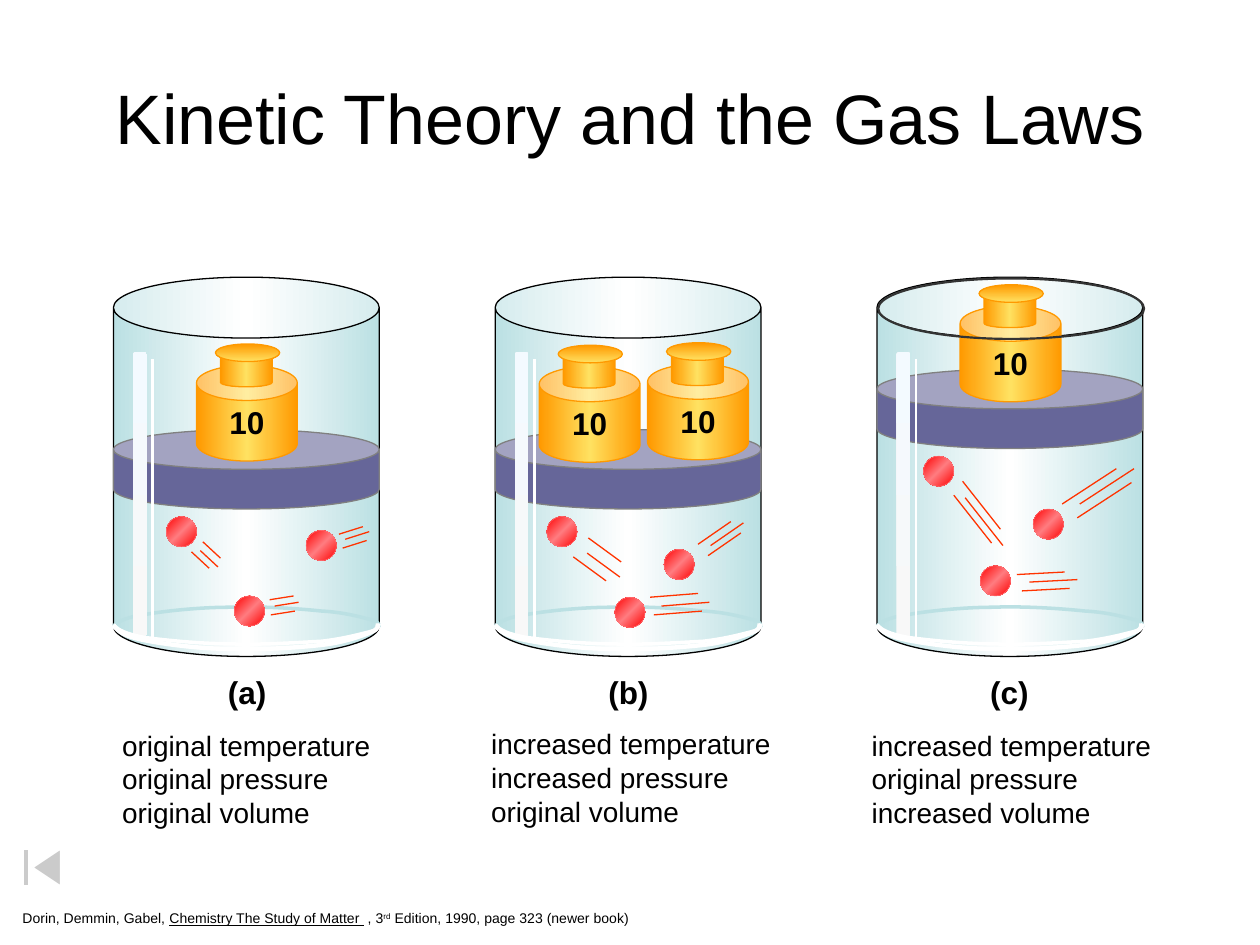
from lxml import etree
from pptx import Presentation
from pptx.dml.color import RGBColor
from pptx.enum.shapes import MSO_CONNECTOR, MSO_SHAPE
from pptx.enum.text import MSO_ANCHOR, MSO_AUTO_SIZE, PP_ALIGN
from pptx.oxml.ns import qn
from pptx.util import Emu, Pt

CAN, OVAL, BAR = MSO_SHAPE.CAN, MSO_SHAPE.OVAL, MSO_SHAPE.ROUNDED_RECTANGLE
BUTTON = MSO_SHAPE.ACTION_BUTTON_BEGINNING
STRAIGHT = MSO_CONNECTOR.STRAIGHT
MIDDLE, CENTER, LEFT = MSO_ANCHOR.MIDDLE, PP_ALIGN.CENTER, PP_ALIGN.LEFT
GROW, FIXED = MSO_AUTO_SIZE.SHAPE_TO_FIT_TEXT, MSO_AUTO_SIZE.NONE

PX = 9144  # EMU per px, 100 px to the inch
FONT = "Arial"
COLORS = {
    "black": "000000", "white": "FFFFFF", "glass": "BBE0E3", "piston": "666699",
    "piston_edge": "808080", "gleam": "F8F8F8", "gleam_end": "F3FAFF",
    "red": "FF0000", "pink": "FF7C80", "streak": "FF3300",
    "orange": "FF9900", "gold": "FFE161", "rim": "333333",
}
GLASS_FILL = (0, "glass", "white", "glass")  # angle, then evenly spaced colours
GLEAM_FILL = (0, "gleam", "gleam_end")
BALL_FILL = (45, "red", "pink", "red")
BRASS_FILL = (0, "orange", "gold", "orange")
CAP_FILL = (90, "orange", "gold")

# Bezier points of the base curves, x measured from the cylinder's left side
BACK_CURVE = [(0, 497), (3, 494), (9, 490), (24, 488), (40, 485), (69, 482), (92, 482),
              (116, 481), (146, 483), (165, 485), (184, 486), (197, 490), (205, 492),
              (213, 494), (210, 497), (211, 498)]
INNER_CURVE = [(0, 496), (4, 500), (9, 503), (25, 506), (40, 508), (69, 511), (92, 511),
               (116, 512), (146, 510), (165, 509), (183, 507), (197, 503), (205, 501),
               (212, 499), (210, 496), (211, 495)]
OUTER_CURVE = [(0, 496), (3, 501), (9, 505), (24, 508), (39, 511), (68, 515), (92, 515),
               (115, 516), (146, 514), (164, 512), (183, 510), (196, 505), (204, 502),
               (212, 499), (209, 496), (210, 495)]

# balls: top left corners; trails: shared vector, then the start of each streak
CYLINDERS = [
    dict(left=90, piston=341, label="(a)", label_left=171, caption_at=(87, 573, 218, 90),
         caption=["original temperature", "original pressure", "original volume"],
         balls=[(243, 421), (186, 473), (132, 410)], weights=[(156, 290)],
         trails=[((19, -6), (269, 424), (274, 428), (272, 435)),
                 ((19, -3), (214, 476), (218, 481), (215, 488)),
                 ((14, 13), (161, 430), (159, 437), (152, 438))]),
    dict(left=393, piston=341, label="(b)", label_left=473, caption_at=(380, 572, 243, 90),
         caption=["increased temperature", "increased pressure", "original volume"],
         balls=[(527, 436), (488, 474), (434, 410)], weights=[(428, 291), (514, 289)],
         trails=[((26, -18), (554, 432), (564, 433), (562, 441)),
                 ((38, -3), (516, 474), (525, 481), (519, 488)),
                 ((26, 19), (467, 427), (466, 439), (455, 442))]),
    dict(left=696, piston=293, label="(c)", label_left=776, caption_at=(682, 573, 243, 90),
         caption=["increased temperature", "original pressure", "increased volume"],
         balls=[(820, 404), (778, 449), (733, 362)], weights=[(762, 243)], rim=True,
         trails=[((43, -28), (843, 400), (857, 400), (855, 411)),
                 ((38, -2), (807, 456), (817, 462), (811, 469)),
                 ((30, 38), (764, 382), (766, 395), (757, 393))]),
]


def color(name):
    return RGBColor.from_string(COLORS[name])


def lengths(*values):
    return [Emu(value * PX) for value in values]


def paint(shape, fill=None, line=None, width=0.75):
    """Fill is a colour name, a gradient tuple or None."""
    shape.shadow.inherit = False
    if fill is None:
        shape.fill.background()
    elif isinstance(fill, str):
        shape.fill.solid()
        shape.fill.fore_color.rgb = color(fill)
    else:
        angle, *names = fill
        shape.fill.gradient()
        gradient = shape._element.spPr.find(qn("a:gradFill"))
        stops = gradient.find(qn("a:gsLst"))
        for stop in list(stops):
            stops.remove(stop)
        for index, name in enumerate(names):
            position = str(100000 * index // (len(names) - 1))
            stop = etree.SubElement(stops, qn("a:gs"), pos=position)
            etree.SubElement(stop, qn("a:srgbClr"), val=COLORS[name])
        gradient.find(qn("a:lin")).set("ang", str(angle * 60000))
    if line:
        shape.line.color.rgb = color(line)
        shape.line.width = Pt(width)
    else:
        shape.line.fill.background()


def add_preset(parent, kind, at, fill=None, line=None, width=0.75, adjust=None):
    shape = parent.add_shape(kind, *lengths(*at))
    if adjust is not None:
        shape.adjustments[0] = adjust
    paint(shape, fill, line, width)
    return shape


def add_line(parent, x1, y1, x2, y2, name, width):
    line = parent.add_connector(STRAIGHT, *lengths(x1, y1, x2, y2))
    line.line.color.rgb = color(name)
    line.line.width = Pt(width)
    etree.SubElement(line._element.spPr, qn("a:effectLst"))


def add_curve(parent, left, points, name, width):
    """Build an outline through the Bezier points, then join each three as a curve."""
    dots = [(left + x, y) for x, y in points]
    builder = parent.build_freeform(*dots[0], scale=PX)
    builder.add_line_segments(dots[1:], close=False)
    shape = builder.convert_to_shape()
    outline = next(shape._element.iter(qn("a:path")))
    for index, segment in enumerate(outline.findall(qn("a:lnTo"))):
        if index % 3 == 0:
            curve = etree.SubElement(outline, qn("a:cubicBezTo"))
        curve.append(segment[0])
        outline.remove(segment)
    paint(shape, None, name, width)


def add_span(para, text, size, bold=False):
    span = para.add_run()
    span.text = text
    span.font.name, span.font.size, span.font.bold = FONT, Pt(size), bold
    span.font.color.rgb = color("black")
    return span


def add_text(parent, at, lines, size, bold=False, align=LEFT):
    box = parent.add_textbox(*lengths(*at))
    frame = box.text_frame
    frame.word_wrap = False
    frame.auto_size = GROW
    for index, line in enumerate(lines):
        para = frame.add_paragraph() if index else frame.paragraphs[0]
        para.alignment = align
        add_span(para, line, size, bold)
    return frame


def add_weight(parent, x, y):
    body = add_preset(parent, CAN, (x, y, 80, 76), BRASS_FILL, "orange", adjust=0.367)
    frame = body.text_frame
    frame.word_wrap = False
    frame.vertical_anchor = MIDDLE
    frame.paragraphs[0].alignment = CENTER
    add_span(frame.paragraphs[0], "10", 18, True)
    add_preset(parent, CAN, (x + 19, y - 11, 41, 28), BRASS_FILL, "orange", adjust=0.25)
    add_preset(parent, OVAL, (x + 15, y - 17, 51, 14), CAP_FILL, "orange")


def add_cylinder(page, data):
    group = page.shapes.add_group_shape().shapes
    left = data["left"]
    # Glass, piston and highlights
    add_preset(group, CAN, (left, 220, 211, 301), GLASS_FILL, "black", adjust=0.229)
    add_curve(group, left, BACK_CURVE, "glass", 2)
    add_preset(group, CAN, (left, data["piston"], 211, 63), "piston", "piston_edge", adjust=0.5)
    gleam = add_preset(group, BAR, (left - 92, 387, 226, 11), GLEAM_FILL, adjust=0.167)
    gleam.rotation = 270
    add_line(group, left + 31, 285, left + 31, 507, "white", 1.5)
    add_curve(group, left, INNER_CURVE, "white", 2)
    add_curve(group, left, OUTER_CURVE, "white", 2.5)
    # Gas particles with their trails
    for x, y in data["balls"]:
        add_preset(group, OVAL, (x, y, 24, 24), BALL_FILL, "pink", 0.25)
    for (dx, dy), *starts in data["trails"]:
        for x, y in starts:
            add_line(group, x, y, x + dx, y + dy, "streak", 0.75)
    # Weights, and the front rim where a weight stands behind it
    for x, y in data["weights"]:
        add_weight(group, x, y)
    if data.get("rim"):
        add_preset(group, OVAL, (left + 1, 221, 211, 48), None, "rim", 1.25)


def add_source(page):
    frame = add_text(page.shapes, (8, 717, 503, 23), ["Dorin, Demmin, Gabel, "], 8)
    para = frame.paragraphs[0]
    add_span(para, "Chemistry The Study of Matter ", 8).font.underline = True
    add_span(para, " , 3", 8)
    add_span(para, "rd", 8)._r.get_or_add_rPr().set("baseline", "30000")
    add_span(para, " Edition, 1990, page 323 (newer book)", 8)


def main():
    deck = Presentation()
    deck.slide_width, deck.slide_height = lengths(1000, 750)
    page = deck.slides.add_slide(deck.slide_layouts[6])
    # Title and source
    title = add_text(page.shapes, (50, 30, 900, 125), ["Kinetic Theory and the Gas Laws"],
                     40, align=CENTER)
    title.auto_size = FIXED
    title.word_wrap = True
    title.vertical_anchor = MIDDLE
    add_source(page)
    # Half transparent button
    button = add_preset(page.shapes, BUTTON, (0, 669, 67, 39), "white", "white")
    tint = button._element.spPr.find(qn("a:solidFill"))[0]
    etree.SubElement(tint, qn("a:alpha"), val="50000")
    # Captions and cylinders
    for data in CYLINDERS:
        add_text(page.shapes, data["caption_at"], data["caption"], 16)
        add_text(page.shapes, (data["label_left"], 529, 53, 40), [data["label"]], 18, True)
    for data in CYLINDERS:
        add_cylinder(page, data)
    deck.save("out.pptx")


if __name__ == "__main__":
    main()
